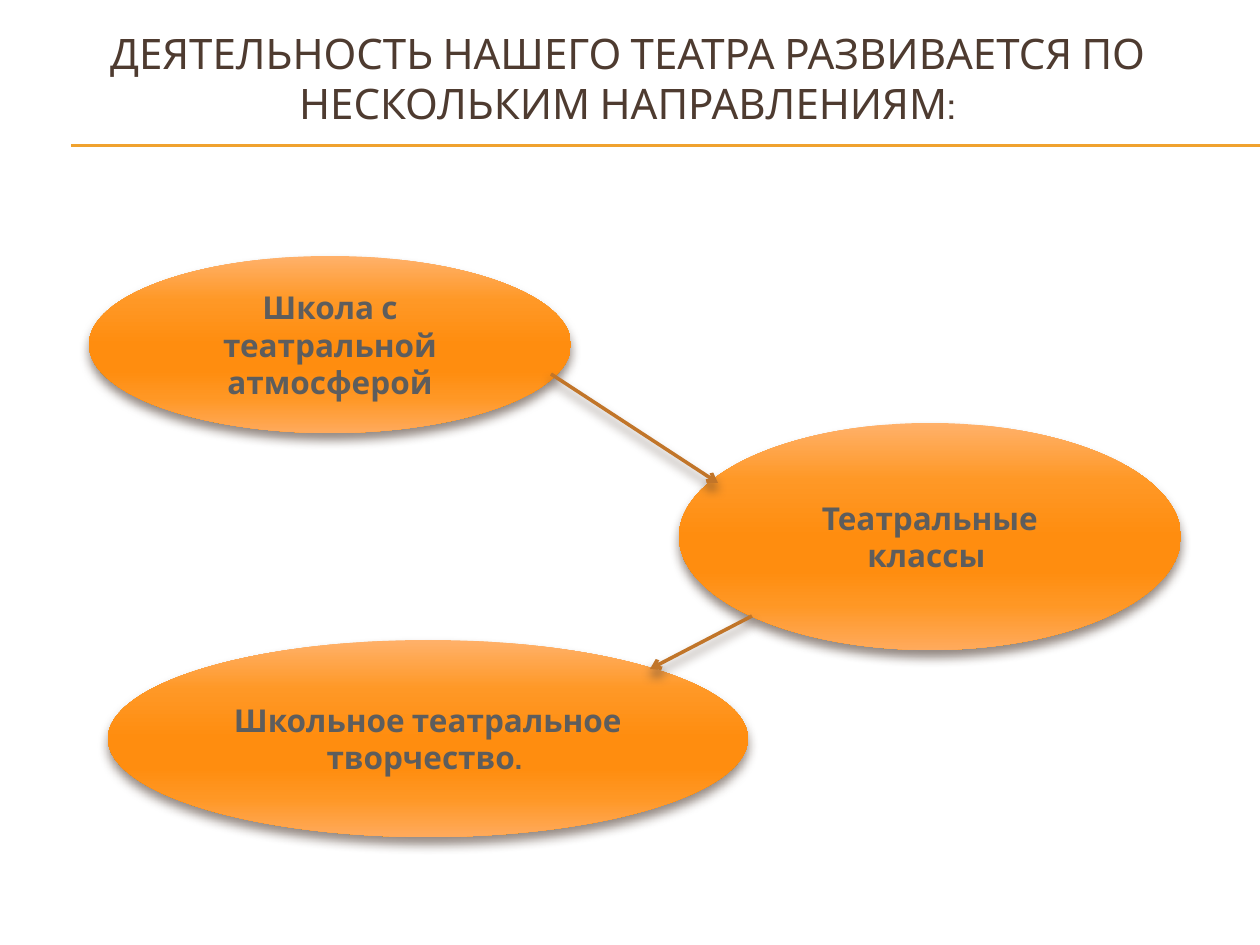
from lxml import etree
from pptx import Presentation
from pptx.dml.color import RGBColor
from pptx.enum.shapes import MSO_CONNECTOR, MSO_SHAPE
from pptx.enum.text import MSO_ANCHOR, PP_ALIGN
from pptx.oxml import parse_xml
from pptx.util import Emu, Pt

STRAIGHT = MSO_CONNECTOR.STRAIGHT
OVAL = MSO_SHAPE.OVAL
MIDDLE = MSO_ANCHOR.MIDDLE
CENTER = PP_ALIGN.CENTER
NAMESPACE = "http://schemas.openxmlformats.org/drawingml/2006/main"
EMU_PER_PX = 914400 / 126
COLORS = {"title": "4E3B30", "label": "5D5D5D", "rule": "F0A22E",
          "arrow": "C17529", "shadow": "4E3B30"}
GRADIENT = [(0, "FFB16A"), (25, "FF9826"), (50, "FF8D0F"),
            (65, "FF8D0F"), (80, "FF9724"), (100, "FFAA5C")]
TITLE_FORMAT = {"name": "Cabin", "size": Pt(24), "bold": False}
LABEL_FORMAT = {"name": "Cabin", "size": Pt(18), "bold": True}
OVALS = [
    ("Школьное театральное творчество. ", (108, 640, 640, 197)),
    ("Театральные классы ", (679, 423, 502, 227)),
    ("Школа с театральной атмосферой", (89, 256, 482, 177)),
]
RULES = [(71, 145, 1260, 145), (71, 146, 1260, 146)]
ARROWS = [(551, 374, 718, 483), (752, 616, 650, 669)]


def px(*lengths):
    """Turn pixel lengths into EMU."""
    return [Emu(round(length * EMU_PER_PX)) for length in lengths]


def add_effects(shape, shadowed):
    """Give a shape a soft shadow below it, or no effect at all."""
    shadow = (
        f'<a:outerShdw blurRad="{Pt(6)}" dist="{Pt(4)}" dir="5400000" rotWithShape="0">'
        f'<a:srgbClr val="{COLORS["shadow"]}"><a:alpha val="60000"/></a:srgbClr>'
        '</a:outerShdw>') if shadowed else ""
    effects = f'<a:effectLst xmlns:a="{NAMESPACE}">{shadow}</a:effectLst>'
    shape._element.spPr.append(parse_xml(effects))


def fill_gradient(shape):
    """Fill a shape with the vertical orange gradient."""
    stops = "".join(
        f'<a:gs pos="{position * 1000}"><a:srgbClr val="{color}"/></a:gs>'
        for position, color in GRADIENT)
    gradient = (f'<a:gradFill xmlns:a="{NAMESPACE}" rotWithShape="1">'
                f'<a:gsLst>{stops}</a:gsLst><a:lin ang="5400000" scaled="0"/></a:gradFill>')
    shape._element.spPr.find(f"{{{NAMESPACE}}}prstGeom").addnext(parse_xml(gradient))


def write_text(shape, text, color, values):
    """Write one centred paragraph in the middle of a shape."""
    frame = shape.text_frame
    frame.word_wrap = True
    frame.vertical_anchor = MIDDLE
    para = frame.paragraphs[0]
    para.alignment = CENTER
    span = para.add_run()
    span.text = text
    for name, value in values.items():
        setattr(span.font, name, value)
    span.font.color.rgb = RGBColor.from_string(COLORS[color])


def add_title(page, text, bounds):
    """Add the heading."""
    box = page.shapes.add_textbox(*px(*bounds))
    write_text(box, text, "title", TITLE_FORMAT)


def add_oval(page, text, bounds):
    """Add a shadowed oval with a label."""
    oval = page.shapes.add_shape(OVAL, *px(*bounds))
    oval.line.fill.background()
    fill_gradient(oval)
    add_effects(oval, True)
    write_text(oval, text, "label", LABEL_FORMAT)


def add_line(page, ends, color, width, arrow=False):
    """Add a straight line, or a shadowed arrow."""
    line = page.shapes.add_connector(STRAIGHT, *px(*ends))
    line.line.color.rgb = RGBColor.from_string(COLORS[color])
    line.line.width = Pt(width)
    if arrow:
        etree.SubElement(line.line._get_or_add_ln(),
                         f"{{{NAMESPACE}}}tailEnd", type="arrow")
    add_effects(line, arrow)


def main():
    """Build the slide and save it."""
    deck = Presentation()
    deck.slide_width, deck.slide_height = px(1260, 945)
    page = deck.slides.add_slide(deck.slide_layouts[6])
    for ends in RULES:
        add_line(page, ends, "rule", 0.75)
    add_title(page, "ДЕЯТЕЛЬНОСТЬ НАШЕГО ТЕАТРА РАЗВИВАЕТСЯ ПО НЕСКОЛЬКИМ НАПРАВЛЕНИЯМ:",
              (29, 20, 1197, 116))
    for text, bounds in OVALS:
        add_oval(page, text, bounds)
    for ends in ARROWS:
        add_line(page, ends, "arrow", 2, arrow=True)
    deck.save("out.pptx")


if __name__ == "__main__":
    main()
